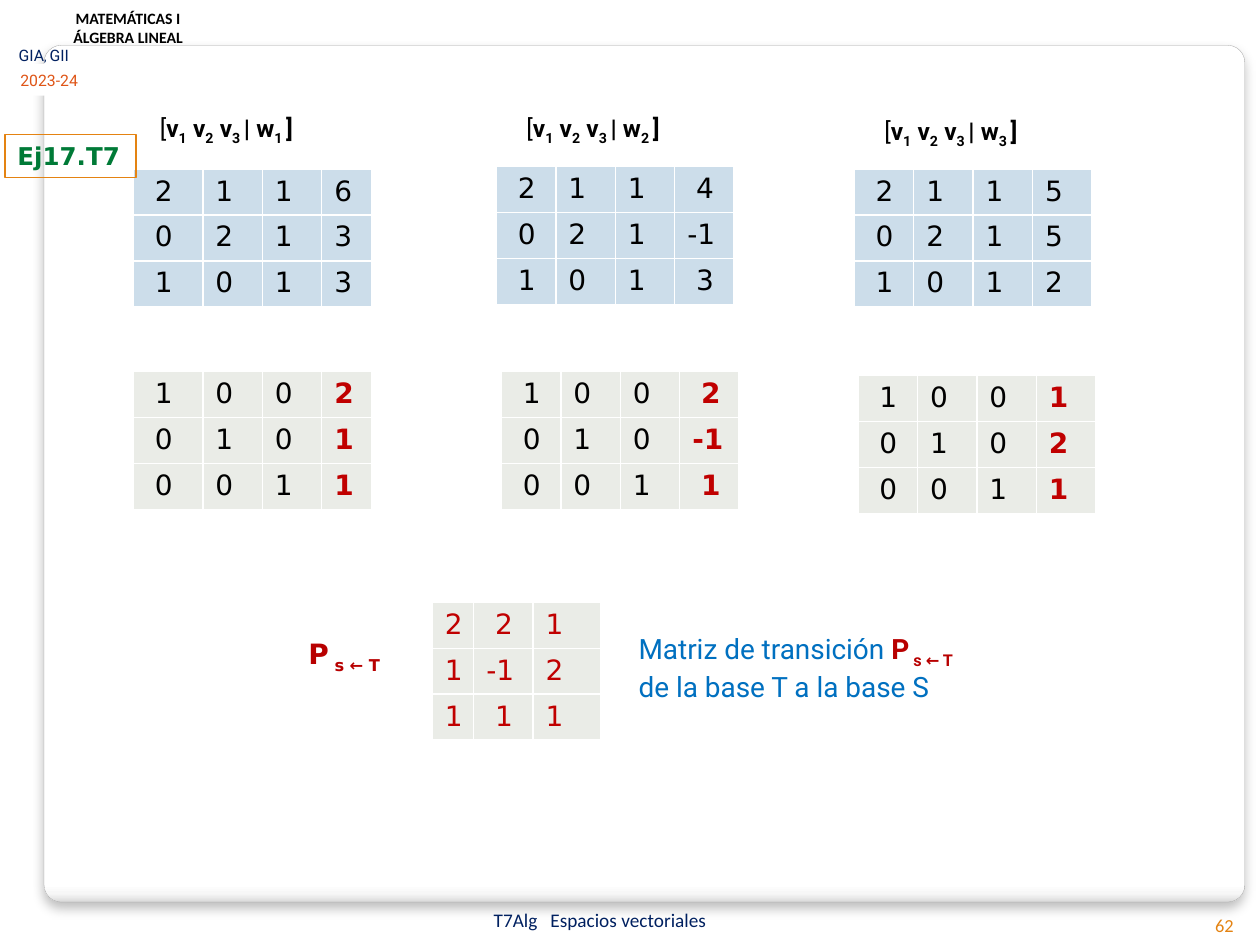
from lxml.etree import SubElement
from pptx import Presentation
from pptx.dml.color import RGBColor as RGB
from pptx.enum.shapes import MSO_SHAPE as Form
from pptx.enum.text import MSO_ANCHOR as Anchor, MSO_AUTO_SIZE as Fit, PP_ALIGN as Align
from pptx.oxml import parse_xml
from pptx.oxml.ns import nsdecls, qn
from pptx.util import Inches, Pt

HUES = {
    "black": "000000", "white": "FFFFFF", "navy": "002060", "blue": "0070C0",
    "red": "C00000", "wine": "B80000", "green": "007A37", "rust": "DF5517",
    "orange": "E48312", "sky": "CCDDEA", "sage": "EAECE7", "edge": "A4A4A4",
    "pale": "F7F7F7", "gray": "DADADA",
}
INK = {name: RGB.from_string(code) for name, code in HUES.items()}

deck = Presentation()
deck.slide_width, deck.slide_height = Inches(10), Inches(7.5)
UNIT = deck.slide_width / 100
slide = deck.slides.add_slide(deck.slide_layouts[6])
shapes = slide.shapes


def say(frame, text, side=Align.LEFT, tab=None, **base):
    lines = [[(text, {})]] if isinstance(text, str) else text
    for k, line in enumerate(lines):
        para = frame.add_paragraph() if k else frame.paragraphs[0]
        para.alignment = side
        if tab:
            stops = SubElement(para._p.get_or_add_pPr(), qn("a:tabLst"))
            SubElement(stops, qn("a:tab"), pos=str(round(tab * UNIT)), algn="l")
        for words, own in line:
            look = {"size": 16, "face": "DejaVu Sans", "hue": "black", "bold": False, **base, **own}
            run = para.add_run()
            run.text = words
            font = run.font
            font.size, font.name, font.bold = Pt(look["size"]), look["face"], look["bold"]
            font.color.rgb = INK[look["hue"]]
            if look.get("drop"):
                run._r.get_or_add_rPr().set("baseline", "-25000")
            if look.get("caps"):
                run._r.get_or_add_rPr().set("cap", "small")


def grid(x, y, widths, data, fill, hue="black", lead=0.7, last=None):
    rows = [row.split() for row in data.split("/")]
    place = [round(n * UNIT) for n in (x, y, sum(widths), 3.65 * len(rows))]
    table = shapes.add_table(len(rows), len(widths), *place).table
    table.first_row = table.horz_banding = False
    for row in table.rows:
        row.height = round(3.65 * UNIT)
    for c, width in enumerate(widths):
        table.columns[c].width = round(width * UNIT)
        signed = any(row[c].startswith("-") for row in rows)
        for r, row in enumerate(rows):
            cell = table.cell(r, c)
            cell.fill.solid()
            cell.fill.fore_color.rgb = INK[fill]
            shift = lead if c == 0 else 0.7 if signed and row[c][0] != "-" else 0
            cell.margin_left = round((1 + shift) * UNIT)
            mark = last and c == len(widths) - 1
            say(cell.text_frame, row[c], hue=last if mark else hue, bold=bool(mark))


panel = shapes.add_shape(Form.ROUNDED_RECTANGLE, *[round(n * UNIT) for n in (3.5, 3.6, 95.3, 68)])
panel.adjustments[0] = 0.02
panel.line.color.rgb = INK["edge"]
panel.line.width = Pt(0.16)
stops = "".join(
    f'<a:gs pos="{spot}000"><a:srgbClr val="{HUES[hue]}"/></a:gs>'
    for spot, hue in ((0, "white"), (98, "white"), (99, "pale"), (100, "gray"))
)
panel.line._ln.addprevious(parse_xml(
    f'<a:gradFill {nsdecls("a")} rotWithShape="1"><a:gsLst>{stops}</a:gsLst>'
    '<a:lin ang="5400000" scaled="0"/></a:gradFill>'
))
panel.line._ln.addnext(parse_xml(
    f'<a:effectLst {nsdecls("a")}><a:outerShdw blurRad="{Pt(6)}" dist="{Pt(4)}" dir="5400000"'
    f' rotWithShape="0"><a:srgbClr val="{HUES["black"]}"><a:alpha val="25000"/></a:srgbClr>'
    '</a:outerShdw></a:effectLst>'
))

EVEN, UNEVEN = [4.72] * 4, [5.5, 4.72, 4.72, 3.95]
grid(34.3, 47.8, [3.3, 4.7, 5.35], "2 2 1/1 -1 2/1 1 1", "sage", hue="red", lead=0)
SUB = {"drop": True}
PST = [("P", {"hue": "wine", "bold": True}), (" s ← T", {"hue": "wine", "bold": True, **SUB})]
boxes = [
    ((0.5, 2.6, 12.6, 3.5), "GIA, GII", {"pad": (1, 1)},
     {"size": 9, "face": "Roboto", "hue": "navy", "caps": True}),
    ((1.2, -0.3, 17.5, 5), [[("MATEMÁTICAS I", {})], [("ÁLGEBRA LINEAL", {})]],
     {"pad": (1.4, 1), "anchor": Anchor.MIDDLE},
     {"size": 9, "face": "Calibri", "bold": True, "side": Align.CENTER}),
    ((38.2, 71.6, 21.3, 2.7), "T7Alg\tEspacios vectoriales", {},
     {"size": 11, "face": "Calibri", "hue": "navy", "tab": 4.5}),
    ((0.4, 5.1, 7, 2.5), "2023-24", {"fill": "white", "wrap": False},
     {"size": 9, "face": "Roboto", "hue": "rust", "side": Align.CENTER}),
    ((23.5, 50, 8.6, 3.7), [PST], {"wrap": False}, {}),
    ((49.7, 49.6, 27.8, 6.4),
     [[("Matriz de transición ", {}), *PST], [("de la base T a la base S", {})]],
     {"wrap": False}, {"face": "Roboto", "hue": "blue"}),
    ((88.1, 71.4, 10.8, 4), "62", {"anchor": Anchor.MIDDLE},
     {"size": 10.5, "face": "Calibri", "hue": "orange", "side": Align.RIGHT}),
    ((0.4, 10.7, 10.4, 3.4), "Ej17.T7", {"line": "orange", "wrap": False},
     {"size": 14, "hue": "green", "bold": True}),
]

systems = [
    (10.6, 13.4, "2 1 1 6/0 2 1 3/1 0 1 3", 10.6, 29.5, "1 0 0 2/0 1 0 1/0 0 1 1", 11.7, 8.5, UNEVEN),
    (39.4, 13.2, "2 1 1 4/0 2 1 -1/1 0 1 3", 39.8, 29.5, "1 0 0 2/0 1 0 -1/0 0 1 1", 40.8, 8.5, EVEN),
    (67.8, 13.4, "2 1 1 5/0 2 1 5/1 0 1 2", 68.1, 29.8, "1 0 0 1/0 1 0 2/0 0 1 1", 69.2, 8.7, EVEN),
]
for k, (x, y, start, rx, ry, end, hx, hy, widths) in enumerate(systems, 1):
    grid(x, y, widths, start, "sky")
    grid(rx, ry, widths, end, "sage", last="red")
    head = [("[", {"bold": False})]
    for name, low in (("v", "1"), (" v", "2"), (" v", "3 "), ("| w", f"{k} ")):
        head += [(name, {}), (low, SUB)]
    head.append(("]", {}))
    boxes.append(((hx, hy, 14.4, 3.4), [head], {"wrap": False},
                  {"size": 14, "face": "Roboto", "bold": True}))

for spot, text, kit, look in boxes:
    place = [round(n * UNIT) for n in spot]
    if "fill" in kit or "line" in kit:
        box = shapes.add_shape(Form.RECTANGLE, *place)
        box.shadow.inherit = False
    else:
        box = shapes.add_textbox(*place)
    if "fill" in kit:
        box.fill.solid()
        box.fill.fore_color.rgb = INK[kit["fill"]]
    else:
        box.fill.background()
    if "line" in kit:
        box.line.color.rgb = INK[kit["line"]]
        box.line.width = Pt(0.75)
    else:
        box.line.fill.background()
    frame = box.text_frame
    frame.word_wrap = kit.get("wrap", True)
    frame.auto_size = Fit.NONE if frame.word_wrap else Fit.SHAPE_TO_FIT_TEXT
    frame.vertical_anchor = kit.get("anchor", Anchor.TOP)
    left, rest = kit.get("pad", (1, 0.5))
    frame.margin_left, frame.margin_right = round(left * UNIT), round(UNIT)
    frame.margin_top = frame.margin_bottom = round(rest * UNIT)
    say(frame, text, **look)

deck.save("out.pptx")
